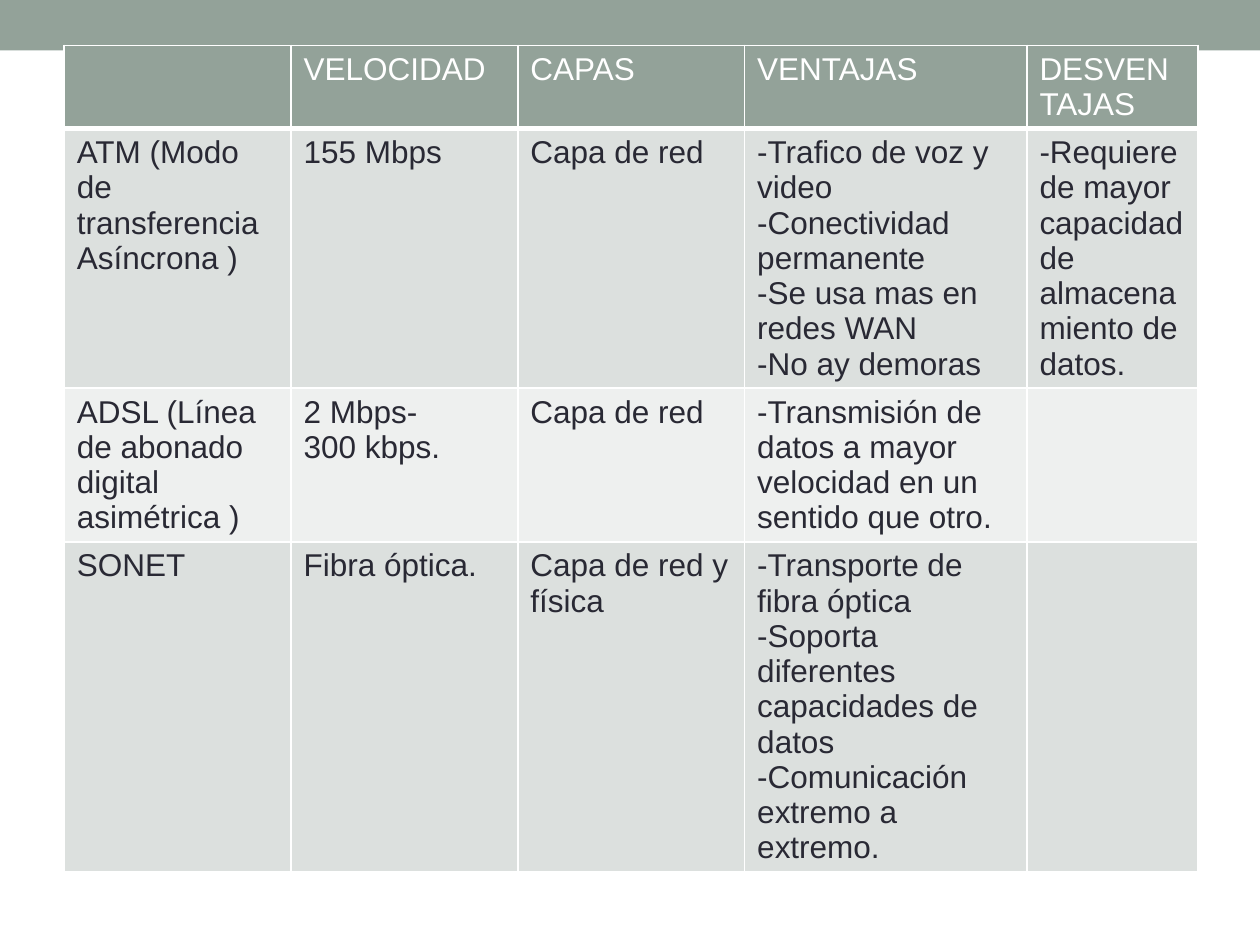
from lxml.etree import SubElement
from pptx import Presentation
from pptx.dml.color import RGBColor
from pptx.enum.shapes import MSO_SHAPE
from pptx.oxml.ns import qn
from pptx.util import Pt

GREEN, WHITE, INK = "93A299", "FFFFFF", "292934"
BANDS = ["DCE0DE", "EEF0EF"]
COLS = [129.6, 129.6, 129.6, 161.3, 97.9]
ROWS = [
    ["", "VELOCIDAD", "CAPAS", "VENTAJAS", "DESVENTAJAS"],
    ["ATM (Modo de transferencia Asíncrona )", "155 Mbps", "Capa de red",
     "-Trafico de voz y video\n-Conectividad permanente\n"
     "-Se usa mas en redes WAN\n-No ay demoras",
     "-Requiere de mayor capacidad de almacenamiento de datos."],
    ["ADSL (Línea de abonado digital asimétrica )", "2 Mbps-\n300 kbps.",
     "Capa de red",
     "-Transmisión de datos a mayor velocidad en un sentido que otro.", ""],
    ["SONET", "Fibra óptica.", "Capa de red y física",
     "-Transporte de fibra óptica\n-Soporta diferentes capacidades de datos\n"
     "-Comunicación extremo a extremo.", ""],
]


def paint(fill, color):
    fill.solid()
    fill.fore_color.rgb = RGBColor.from_string(color)


def add_band(slide):
    band = slide.shapes.add_shape(MSO_SHAPE.RECTANGLE, 0, 0, Pt(720), Pt(28.8))
    band.shadow.inherit = False
    paint(band.fill, GREEN)
    band.line.fill.background()


def edge(cell, base):
    """Draw white cell borders; base is the bottom width in points."""
    props = cell._tc.get_or_add_tcPr()
    for side, width in zip("LRTB", [1, 1, 1, base]):
        line = SubElement(props, qn(f"a:ln{side}"), w=str(Pt(width)))
        fill = SubElement(line, qn("a:solidFill"))
        SubElement(fill, qn("a:srgbClr"), val=WHITE)


def fill_cell(cell, text, back, color, base):
    edge(cell, base)
    paint(cell.fill, back)
    cell.text_frame.text = text
    for para in cell.text_frame.paragraphs:
        para.font.size = Pt(18)
        for run in para.runs:
            run.font.name = "Arial"
            run.font.size = Pt(18)
            run.font.bold = False
            run.font.color.rgb = RGBColor.from_string(color)


def add_grid(slide):
    frame = slide.shapes.add_table(len(ROWS), len(COLS), Pt(36.7), Pt(26),
                                   Pt(sum(COLS)), Pt(504))
    table = frame.table
    for col, width in zip(table.columns, COLS):
        col.width = Pt(width)
    for i, texts in enumerate(ROWS):
        # Rows start at one line and grow with their text.
        table.rows[i].height = Pt(29.2)
        look = (BANDS[(i - 1) % 2], INK, 1) if i else (GREEN, WHITE, 3)
        for j, text in enumerate(texts):
            fill_cell(table.cell(i, j), text, *look)
    frame.height = Pt(504)


def main():
    deck = Presentation()
    deck.slide_width, deck.slide_height = Pt(720), Pt(540)
    slide = deck.slides.add_slide(deck.slide_layouts[6])
    paint(slide.background.fill, WHITE)
    add_band(slide)
    add_grid(slide)
    deck.save("out.pptx")


if __name__ == "__main__":
    main()
